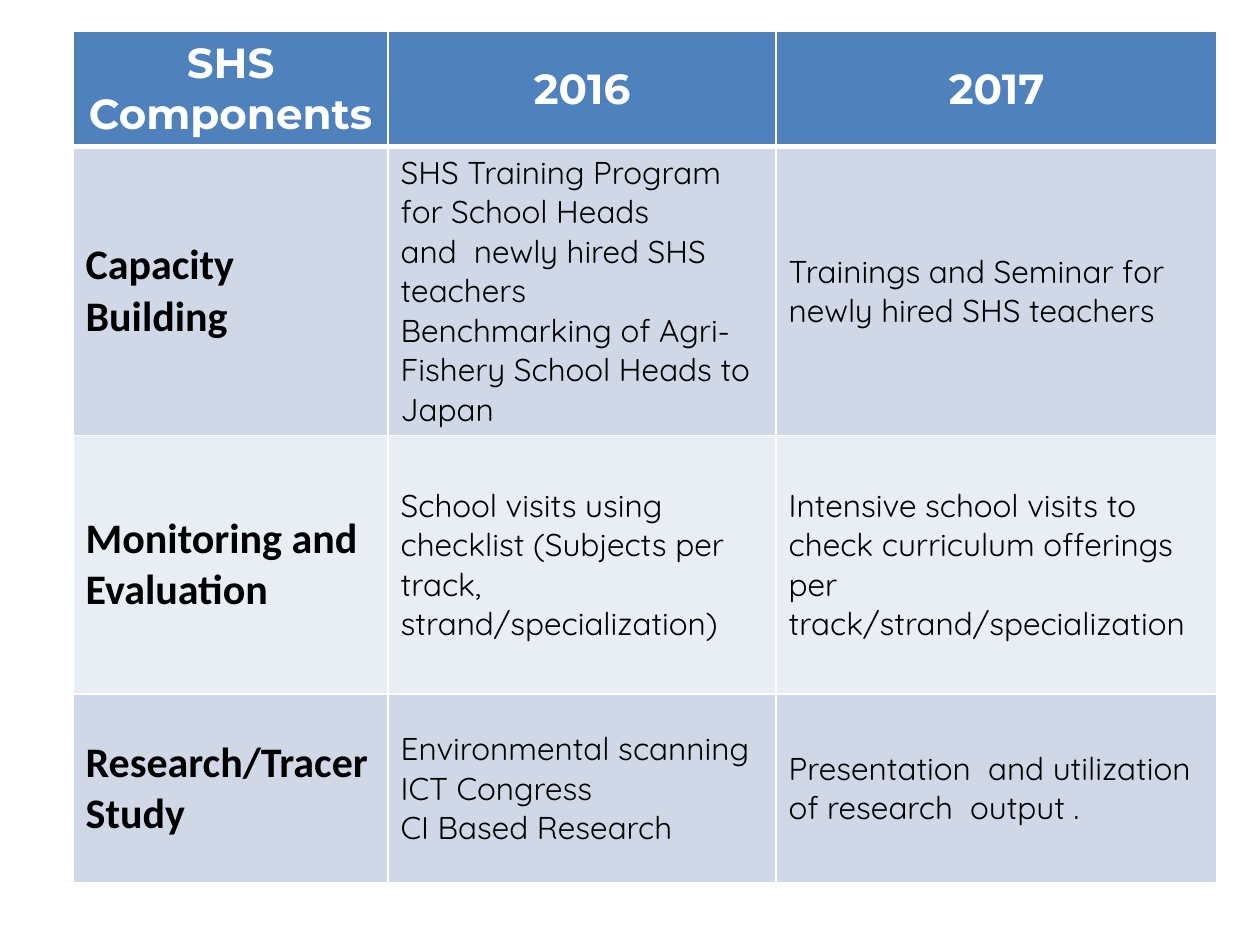
"""Build a slide with a table of SHS components and their activities by year."""
from lxml import etree
from pptx import Presentation
from pptx import util as u
from pptx.dml.color import RGBColor
from pptx.enum import text
from pptx.oxml import ns


def color(hex_value):
    return RGBColor.from_string(hex_value)


def add_border(cell, side, width):
    line = etree.SubElement(cell._tc.get_or_add_tcPr(), ns.qn(f"a:ln{side}"), w=str(u.Pt(width)))
    fill = etree.SubElement(line, ns.qn("a:solidFill"))
    etree.SubElement(fill, ns.qn("a:srgbClr"), val="FFFFFF")


column_widths = [2.5, 3.08, 3.5]
row_heights = [0.68, 1.5, 2.05, 1.5]
row_fills = ["4F81BD", "D0D8E8", "E9EDF4", "D0D8E8"]
rows = [
    [["SHS Components"], ["2016"], ["2017"]],
    [
        ["Capacity Building"],
        [
            "SHS Training Program for School Heads",
            "and  newly hired SHS teachers",
            "Benchmarking of Agri- Fishery School Heads to Japan",
        ],
        ["Trainings and Seminar for newly hired SHS teachers"],
    ],
    [
        ["Monitoring and Evaluation"],
        ["School visits using checklist (Subjects per track, strand/specialization)"],
        ["Intensive school visits to check curriculum offerings per track/strand/specialization"],
    ],
    [
        ["Research/Tracer Study"],
        ["Environmental scanning", "ICT Congress", "CI Based Research"],
        ["Presentation  and utilization of research  output ."],
    ],
]

presentation = Presentation()
presentation.slide_width = u.Inches(10)
presentation.slide_height = u.Inches(7.5)
slide = presentation.slides.add_slide(presentation.slide_layouts[6])

table = slide.shapes.add_table(
    len(rows), len(column_widths),
    u.Inches(0.58), u.Inches(0.25), u.Inches(sum(column_widths)), u.Inches(sum(row_heights)),
).table
for column, width in zip(table.columns, column_widths):
    column.width = u.Inches(width)
for row, height in zip(table.rows, row_heights):
    row.height = u.Inches(height)

for row_index, row_cells in enumerate(rows):
    for column_index, lines in enumerate(row_cells):
        is_header = row_index == 0
        is_label = column_index == 0
        if is_header:
            font_name, size, font_color = "Montserrat", 24, "FFFFFF"
        elif is_label:
            font_name, size, font_color = "Calibri", 24, "000000"
        else:
            font_name, size, font_color = "Quicksand", 18, "000000"

        cell = table.cell(row_index, column_index)
        for side in "LRTB":
            touches_header = (is_header and side == "B") or (row_index == 1 and side == "T")
            add_border(cell, side, 3 if touches_header else 1)
        cell.fill.solid()
        cell.fill.fore_color.rgb = color(row_fills[row_index])
        cell.vertical_anchor = text.MSO_ANCHOR.MIDDLE

        frame = cell.text_frame
        for line_index, line in enumerate(lines):
            paragraph = frame.add_paragraph() if line_index else frame.paragraphs[0]
            paragraph.alignment = text.PP_ALIGN.CENTER if is_header else text.PP_ALIGN.LEFT
            run = paragraph.add_run()
            run.text = line
            run.font.name = font_name
            run.font.size = u.Pt(size)
            run.font.bold = is_header or is_label
            run.font.color.rgb = color(font_color)

presentation.save("out.pptx")
